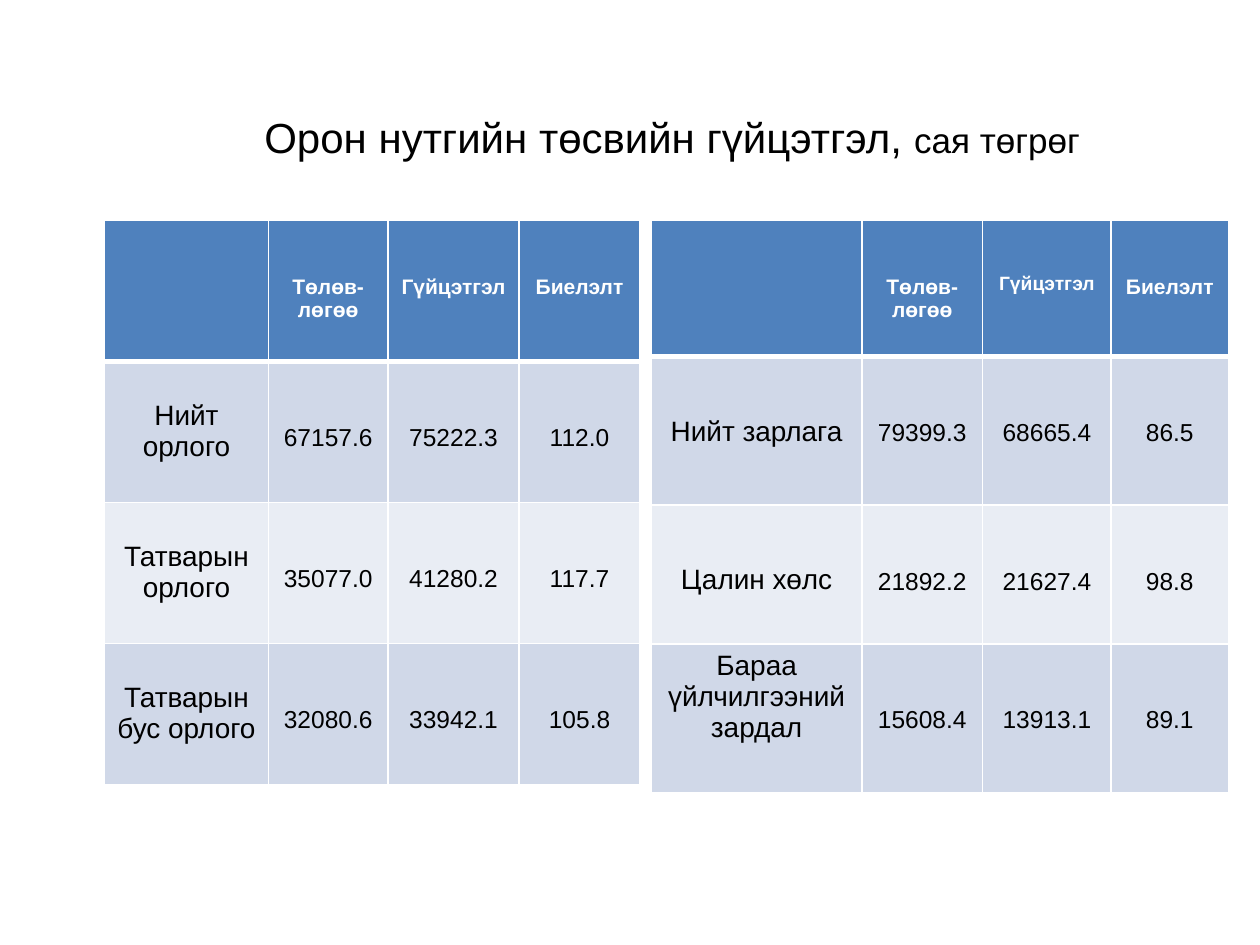
from lxml.etree import SubElement as Sub
from pptx import Presentation
from pptx.dml.color import RGBColor as RGB
from pptx.enum.text import MSO_ANCHOR as Anchor, PP_ALIGN as Align
from pptx.oxml.ns import qn
from pptx.util import Inches, Pt

COLORS = {"text": "000000", "head": "4F81BD", "white": "FFFFFF",
          "odd": "D0D8E8", "even": "E9EDF4"}


class Deck:
    """Holds the style and the current slide."""
    font = "Arial"
    pad = 0.05    # top inset of a cell
    lead = 1.15   # line height as a multiple of the text size

    def __init__(self):
        self.prs = Presentation()
        self.prs.slide_width, self.prs.slide_height = Inches(10), Inches(7.5)
        self.slide = self.prs.slides.add_slide(self.prs.slide_layouts[6])

    def label(self, para, text, size, color="text", bold=False):
        run = para.add_run()
        run.text = text
        para.alignment = Align.CENTER
        look = {"name": self.font, "size": Pt(size), "bold": bold}
        for key, val in look.items():
            setattr(run.font, key, val)
        run.font.color.rgb = RGB.from_string(COLORS[color])

    def title(self, box, parts):
        frame = self.slide.shapes.add_textbox(*map(Inches, box)).text_frame
        for key, val in {"word_wrap": True, "vertical_anchor": Anchor.MIDDLE}.items():
            setattr(frame, key, val)
        for text, size in parts:
            self.label(frame.paragraphs[0], text, size)

    def edges(self, cell, row):
        widths = {"L": 1, "R": 1, "T": 3 if row == 1 else 1, "B": 1 if row else 3}
        props = cell._tc.get_or_add_tcPr()
        for side, width in widths.items():
            line = Sub(props, qn(f"a:ln{side}"), w=str(Pt(width)))
            fill = Sub(line, qn("a:solidFill"))
            Sub(fill, qn("a:srgbClr"), val=COLORS["white"])

    def cell(self, cell, row, text, size, drop):
        """Fill one cell; drop is the space above its text in points."""
        self.edges(cell, row)
        tone = ("even" if row % 2 == 0 else "odd") if row else "head"
        cell.fill.solid()
        cell.fill.fore_color.rgb = RGB.from_string(COLORS[tone])
        look = {"margin_left": Inches(0.08), "margin_right": Inches(0.08),
                "margin_top": Inches(self.pad) + Pt(drop * self.lead),
                "vertical_anchor": Anchor.TOP}
        for key, val in look.items():
            setattr(cell, key, val)
        if text:
            ink = "white" if row == 0 else "text"
            self.label(cell.text_frame.paragraphs[0], text, size, ink, row == 0)

    def table(self, left, top, cols, rows, heads, body):
        box = map(Inches, (left, top, sum(cols), sum(rows)))
        table = self.slide.shapes.add_table(len(rows), len(cols), *box).table
        for col, width in zip(table.columns, cols):
            col.width = Inches(width)
        for line, height in zip(table.rows, rows):
            line.height = Inches(height)
        # Header row
        self.cell(table.cell(0, 0), 0, "", 12, 0)
        for j, (text, size) in enumerate(heads, 1):
            self.cell(table.cell(0, j), 0, text, size, 12 + size)
        # Label and figures of each body row
        for i, (name, drop, *nums) in enumerate(body, 1):
            self.cell(table.cell(i, 0), i, name, 16, drop)
            for j, num in enumerate(nums, 1):
                self.cell(table.cell(i, j), i, num, 14, 28)


def main():
    deck = Deck()
    deck.title((1.17, 0.67, 8.33, 0.83),
               [("Орон нутгийн төсвийн гүйцэтгэл, ", 24), ("сая төгрөг", 20)])

    # Income
    deck.table(0.83, 1.75, [1.3, 0.95, 1.04, 0.96], [1.12] * 4,
               [("Төлөв-лөгөө", 12), ("Гүйцэтгэл", 12), ("Биелэлт", 12)],
               [("Нийт орлого", 16, "67157.6", "75222.3", "112.0"),
                ("Татварын орлого", 16, "35077.0", "41280.2", "117.7"),
                ("Татварын бус орлого", 16, "32080.6", "33942.1", "105.8")])

    # Spending
    deck.table(5.17, 1.75, [1.67, 0.96, 1.02, 0.93], [1.08, 1.18, 1.1, 1.18],
               [("Төлөв-лөгөө", 12), ("Гүйцэтгэл", 11), ("Биелэлт", 12)],
               [("Нийт зарлага", 26.5, "79399.3", "68665.4", "86.5"),
                ("Цалин хөлс", 26, "21892.2", "21627.4", "98.8"),
                ("Бараа үйлчилгээний зардал", 0, "15608.4", "13913.1", "89.1")])

    deck.prs.save("out.pptx")


if __name__ == "__main__":
    main()
